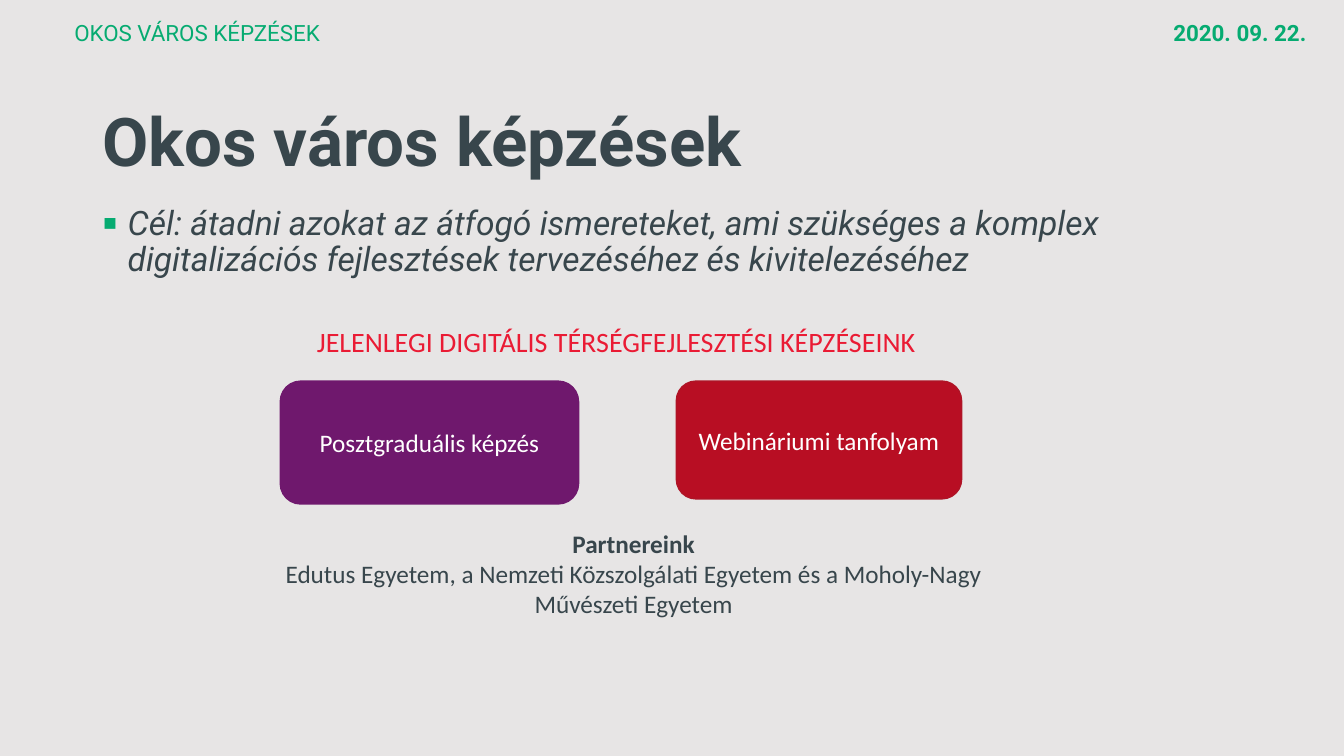
from dataclasses import dataclass

from lxml import etree
from pptx import Presentation
from pptx.dml.color import RGBColor
from pptx.enum.shapes import MSO_SHAPE as Shape
from pptx.enum.text import MSO_ANCHOR as Anchor, MSO_AUTO_SIZE as AutoSize, PP_ALIGN as Align
from pptx.oxml.ns import qn
from pptx.util import Pt


@dataclass(frozen=True)
class Theme:
    background: str = "E7E5E5"
    ink: str = "38464C"
    green: str = "06AB71"
    red: str = "EA1B34"
    purple: str = "6F186D"
    crimson: str = "B80E23"
    crimson_edge: str = "AF1426"
    white: str = "FFFFFF"
    heading_font: str = "Roboto"
    text_font: str = "Calibri"
    title_size: int = 48
    goal_size: int = 24
    subtitle_size: int = 20
    label_size: int = 18
    header_size: int = 16


theme = Theme()


def place(box, left, top, width, height, anchor=Anchor.TOP):
    box.left, box.top, box.width, box.height = Pt(left), Pt(top), Pt(width), Pt(height)
    frame = box.text_frame
    frame.word_wrap = True
    frame.auto_size = AutoSize.NONE
    frame.vertical_anchor = anchor
    return frame


def write(para, text, font, size, color, align=Align.LEFT, bold=False, italic=False):
    para.alignment = align
    span = para.add_run()
    span.text = text
    span.font.name = font
    span.font.size = Pt(size)
    span.font.color.rgb = RGBColor.from_string(color)
    span.font.bold = bold
    span.font.italic = italic


deck = Presentation()
deck.slide_width, deck.slide_height = Pt(960), Pt(540)
page = deck.slides.add_slide(deck.slide_layouts[1])
page.background.fill.solid()
page.background.fill.fore_color.rgb = RGBColor.from_string(theme.background)

# Title
title = place(page.shapes.title, 66, 72, 828, 61.2, Anchor.BOTTOM).paragraphs[0]
title.line_spacing = 0.9
write(title, "Okos város képzések", theme.heading_font, theme.title_size, theme.ink, bold=True)

# Goal, with a green square bullet
goal = place(page.placeholders[1], 66, 144, 828, 92.2).paragraphs[0]
properties = goal._p.get_or_add_pPr()
properties.set("marL", str(Pt(18)))
properties.set("indent", str(Pt(-18)))
bullet_color = etree.SubElement(properties, qn("a:buClr"))
etree.SubElement(bullet_color, qn("a:srgbClr"), val=theme.green)
etree.SubElement(properties, qn("a:buSzPct"), val="130000")
etree.SubElement(properties, qn("a:buFont"), typeface="Arial")
etree.SubElement(properties, qn("a:buChar"), char="▪")
goal.line_spacing = 0.9
goal.space_before = Pt(0)
write(goal, "Cél: átadni azokat az átfogó ismereteket, ami szükséges a komplex "
      "digitalizációs fejlesztések tervezéséhez és kivitelezéséhez",
      theme.heading_font, theme.goal_size, theme.ink, italic=True)

# Header line
for text, left, width, align, bold in (
    ("OKOS VÁROS KÉPZÉSEK", 46, 668, Align.LEFT, False),
    ("2020. 09. 22.", 724.3, 216, Align.RIGHT, True),
):
    box = page.shapes.add_textbox(0, 0, 0, 0)
    header = place(box, left, 10, width, 28.8).paragraphs[0]
    write(header, text, theme.heading_font, theme.header_size, theme.green, align, bold)

# Current courses
box = page.shapes.add_textbox(0, 0, 0, 0)
subtitle = place(box, 200.2, 228.2, 480.2, 31.7).paragraphs[0]
write(subtitle, "JELENLEGI DIGITÁLIS TÉRSÉGFEJLESZTÉSI KÉPZÉSEINK",
      theme.text_font, theme.subtitle_size, theme.red, Align.CENTER)

for text, left, width, height, fill, edge in (
    ("Posztgraduális képzés", 200.2, 213.1, 87.8, theme.purple, theme.purple),
    ("Webináriumi tanfolyam", 483.1, 203.8, 84.2, theme.crimson, theme.crimson_edge),
):
    course = page.shapes.add_shape(Shape.ROUNDED_RECTANGLE, 0, 0, 0, 0)
    course.shadow.inherit = False
    course.fill.solid()
    course.fill.fore_color.rgb = RGBColor.from_string(fill)
    course.line.color.rgb = RGBColor.from_string(edge)
    course.line.width = Pt(1)
    label = place(course, left, 272.2, width, height, Anchor.MIDDLE).paragraphs[0]
    write(label, text, theme.text_font, theme.label_size, theme.white, Align.CENTER)

# Partners
box = page.shapes.add_textbox(0, 0, 0, 0)
partners = place(box, 160.6, 373.7, 583.9, 72.7)
write(partners.paragraphs[0], "Partnereink", theme.text_font, theme.label_size, theme.ink,
      Align.CENTER, bold=True)
write(partners.add_paragraph(),
      "Edutus Egyetem, a Nemzeti Közszolgálati Egyetem és a Moholy-Nagy Művészeti Egyetem",
      theme.text_font, theme.label_size, theme.ink, Align.CENTER)

deck.save("out.pptx")
